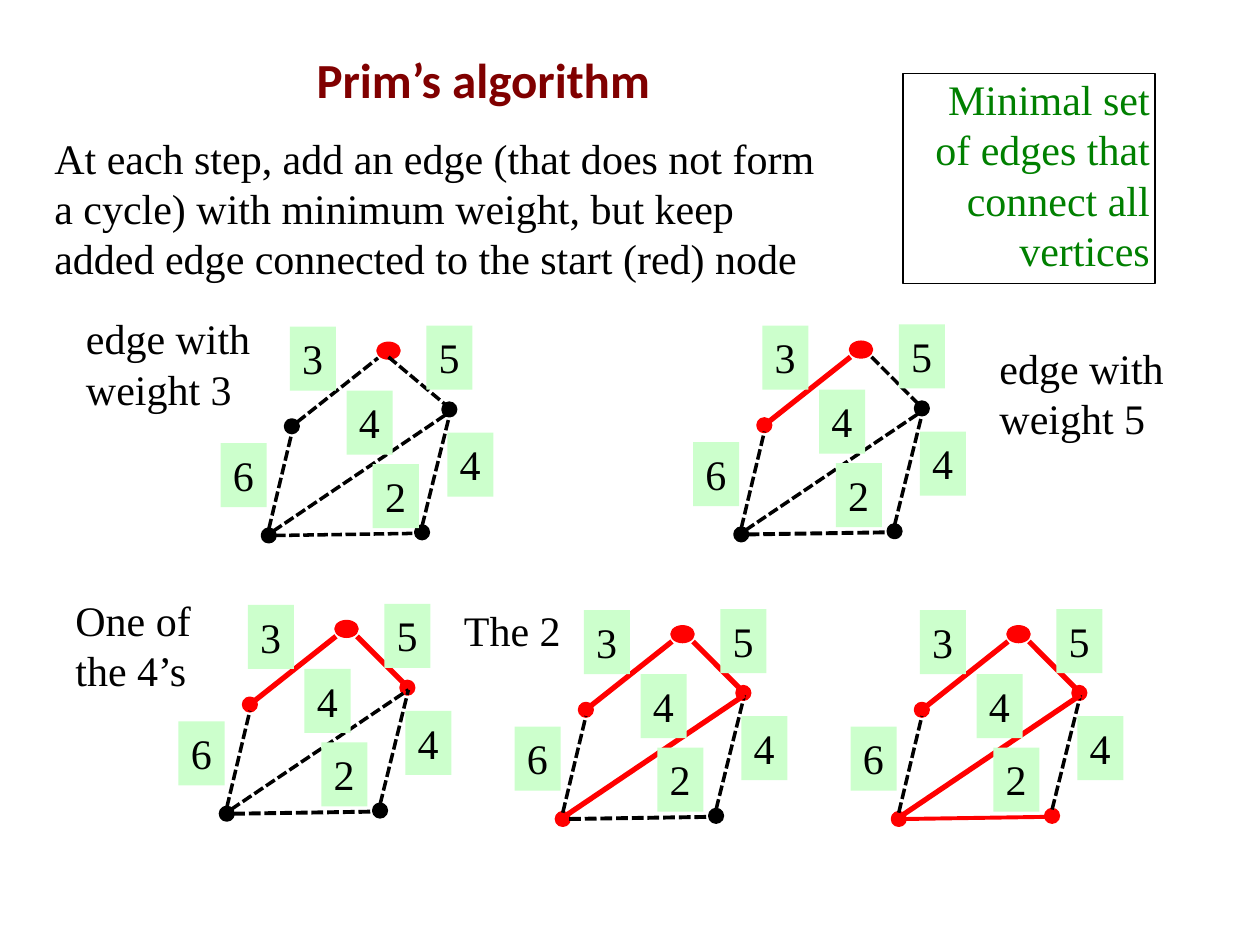
"""Build the slide on Prim's algorithm with five stages of a weighted graph."""
import dataclasses
import typing

import pptx
import pptx.dml.color
import pptx.enum.dml
import pptx.enum.shapes
import pptx.enum.text
import pptx.oxml.ns
import pptx.util
from lxml import etree

BLACK = pptx.dml.color.RGBColor(0x00, 0x00, 0x00)
RED = pptx.dml.color.RGBColor(0xFF, 0x00, 0x00)
GREEN = pptx.dml.color.RGBColor(0x00, 0x80, 0x00)
MAROON = pptx.dml.color.RGBColor(0x80, 0x00, 0x00)
MINT = pptx.dml.color.RGBColor(0xCC, 0xFF, 0xCC)

SERIF = "Times New Roman"
COLUMNS, ROWS = 120, 90
CELL = pptx.util.Inches(10) // COLUMNS
NODE_SIZE = (1.2, 1.2)
START_SIZE = (2, 1.4)
WEIGHT_SIZE = (4.4, 6.1)

Point = tuple[float, float]


class Edge(typing.NamedTuple):
    """An edge between two grid points, with the corner of its weight label."""

    name: str
    begin: Point
    end: Point
    weight: str
    label: Point
    chosen_width: float = 3
    open_width: float = 2


@dataclasses.dataclass(frozen=True)
class Stage:
    """One stage: its corner on the grid and the nodes and edges reached so far."""

    origin: Point
    reached: frozenset[str] = frozenset()
    chosen: frozenset[str] = frozenset()
    edges: tuple[Edge, ...] = ()


class Caption(typing.NamedTuple):
    """A free text and its box in grid cells."""

    text: str
    corner: Point
    size: Point


NODES: dict[str, Point] = {
    "left": (6.8, 9.6),
    "low left": (4.6, 20),
    "low right": (19.2, 19.7),
    "right": (21.8, 8),
}
START: Point = (16, 2.4)

EDGES = (
    Edge("left side", (4.6, 19.4), (6.8, 10.2), "6", (0, 11.2)),
    Edge("right side", (19.2, 19.1), (21.9, 8.2), "4", (21.6, 10.2)),
    Edge("start right", (17, 3.1), (21.5, 7.6), "5", (19.6, 0)),
    Edge("start left", (7.3, 9.2), (15, 3.1), "3", (6.6, 0.1)),
    Edge("diagonal", (5, 19.6), (21.9, 8.2), "4", (12, 6.2)),
    Edge("base", (5.2, 20), (18.6, 19.8), "2", (13.6, 13.2), 2.25, 2.25),
)
FIRST_CHANGES = {
    "start right": {"begin": (16, 3)},
    "base": {"label": (14.5, 13.2), "open_width": 2},
}
FIRST_EDGES = tuple(edge._replace(**FIRST_CHANGES.get(edge.name, {})) for edge in EDGES)

GROWTH = (("left", "start left"), ("right", "start right"),
          ("low left", "diagonal"), ("low right", "base"))
ORIGINS: tuple[Point, ...] = ((21, 31), (66, 30.9), (17, 57.5), (49, 58), (81, 58))
STAGES = tuple(
    Stage(
        origin,
        frozenset(node for node, _ in GROWTH[:step]),
        frozenset(edge for _, edge in GROWTH[:step]),
        EDGES if step else FIRST_EDGES,
    )
    for step, origin in enumerate(ORIGINS)
)

CAPTIONS = (
    Caption(
        "At each step, add an edge (that does not form a cycle) with minimum weight, "
        "but keep added edge connected to the start (red) node",
        (4, 12), (77, 20.6),
    ),
    Caption("edge with weight 3", (7, 29.2), (20, 10.9)),
    Caption("edge with weight 5", (94, 32), (20, 10.9)),
    Caption("One of the 4’s", (6, 56), (15, 10.9)),
    Caption("The 2", (43, 57), (15, 6.1)),
)


def cells(*counts: float) -> list[int]:
    """Convert counts of grid cells to lengths."""
    return [round(count * CELL) for count in counts]


def shift(point: Point, origin: Point) -> Point:
    """Move a point of a graph to its place on the slide."""
    return point[0] + origin[0], point[1] + origin[1]


def set_margins(frame, left: float, top: float, right: float, bottom: float) -> None:
    """Set the insets of a text frame in inches."""
    frame.margin_left, frame.margin_top, frame.margin_right, frame.margin_bottom = map(
        pptx.util.Inches, (left, top, right, bottom))


def write(frame, text: str, color=BLACK, size: float = 24, face: str = SERIF,
          align=pptx.enum.text.PP_ALIGN.LEFT):
    """Fill a text frame with one formatted paragraph and return it."""
    frame.text = text
    paragraph = frame.paragraphs[0]
    paragraph.alignment = align
    paragraph.font.name = face
    paragraph.font.size = pptx.util.Pt(size)
    paragraph.font.color.rgb = color
    return paragraph


def add_node(graph, center: Point, size: Point, color) -> None:
    """Draw a vertex around its centre."""
    corner = center[0] - size[0] / 2, center[1] - size[1] / 2
    node = graph.shapes.add_shape(
        pptx.enum.shapes.MSO_SHAPE.OVAL, *cells(*corner, *size))
    node.shadow.inherit = False
    node.fill.solid()
    node.fill.fore_color.rgb = color
    node.line.color.rgb = color
    node.line.width = pptx.util.Pt(2)


def add_edge(graph, edge: Edge, origin: Point, chosen: bool) -> None:
    """Draw an edge, solid red when chosen and dashed black otherwise."""
    link = graph.shapes.add_connector(
        pptx.enum.shapes.MSO_CONNECTOR.STRAIGHT,
        *cells(*shift(edge.begin, origin), *shift(edge.end, origin)))
    etree.SubElement(link.line._get_or_add_ln().getparent(), pptx.oxml.ns.qn("a:effectLst"))
    link.line.color.rgb = RED if chosen else BLACK
    link.line.width = pptx.util.Pt(edge.chosen_width if chosen else edge.open_width)
    if not chosen:
        link.line.dash_style = pptx.enum.dml.MSO_LINE.SQUARE_DOT


def add_weight(graph, edge: Edge, origin: Point) -> None:
    """Draw the weight label of an edge."""
    weight = graph.shapes.add_textbox(*cells(*shift(edge.label, origin), *WEIGHT_SIZE))
    weight.fill.solid()
    weight.fill.fore_color.rgb = MINT
    weight.text_frame.word_wrap = False
    weight.text_frame.auto_size = pptx.enum.text.MSO_AUTO_SIZE.SHAPE_TO_FIT_TEXT
    write(weight.text_frame, edge.weight)


def add_stage(slide, stage: Stage) -> None:
    """Draw the graph of one stage as a group."""
    graph = slide.shapes.add_group_shape()
    for name, center in NODES.items():
        add_node(graph, shift(center, stage.origin), NODE_SIZE,
                 RED if name in stage.reached else BLACK)
    add_node(graph, shift(START, stage.origin), START_SIZE, RED)
    for edge in stage.edges:
        add_edge(graph, edge, stage.origin, edge.name in stage.chosen)
    for edge in stage.edges:
        add_weight(graph, edge, stage.origin)


def add_caption(slide, caption: Caption) -> None:
    """Draw a wrapped free text."""
    box = slide.shapes.add_textbox(*cells(*caption.corner, *caption.size))
    box.text_frame.word_wrap = True
    box.text_frame.auto_size = pptx.enum.text.MSO_AUTO_SIZE.SHAPE_TO_FIT_TEXT
    write(box.text_frame, caption.text)


def add_title(slide) -> None:
    """Place and format the title."""
    title = slide.shapes.title
    title.left, title.top, title.width, title.height = cells(4, 3, 85, 9)
    frame = title.text_frame
    frame.auto_size = pptx.enum.text.MSO_AUTO_SIZE.NONE
    frame.vertical_anchor = pptx.enum.text.MSO_ANCHOR.MIDDLE
    set_margins(frame, 0.06, 0.06, 0.14, 0.06)
    write(frame, "Prim’s algorithm", MAROON, 28, "Calibri",
          pptx.enum.text.PP_ALIGN.CENTER).font.bold = True


def add_definition(slide) -> None:
    """Draw the framed definition of a spanning tree."""
    definition = slide.shapes.add_shape(
        pptx.enum.shapes.MSO_SHAPE.RECTANGLE, *cells(86, 7, 24, 20))
    definition.shadow.inherit = False
    definition.fill.background()
    definition.line.color.rgb = BLACK
    definition.line.width = pptx.util.Pt(1)
    frame = definition.text_frame
    frame.word_wrap = True
    frame.vertical_anchor = pptx.enum.text.MSO_ANCHOR.TOP
    set_margins(frame, 0.04, 0, 0.04, 0)
    write(frame, "Minimal set of edges that connect all vertices", GREEN,
          align=pptx.enum.text.PP_ALIGN.RIGHT).space_before = pptx.util.Pt(10)


def main() -> None:
    """Build and save the slide."""
    deck = pptx.Presentation()
    deck.slide_width, deck.slide_height = cells(COLUMNS, ROWS)
    slide = deck.slides.add_slide(deck.slide_layouts.get_by_name("Title Only"))
    add_title(slide)
    add_definition(slide)
    for stage in STAGES:
        add_stage(slide, stage)
    for caption in CAPTIONS:
        add_caption(slide, caption)
    deck.save("out.pptx")


if __name__ == "__main__":
    main()
